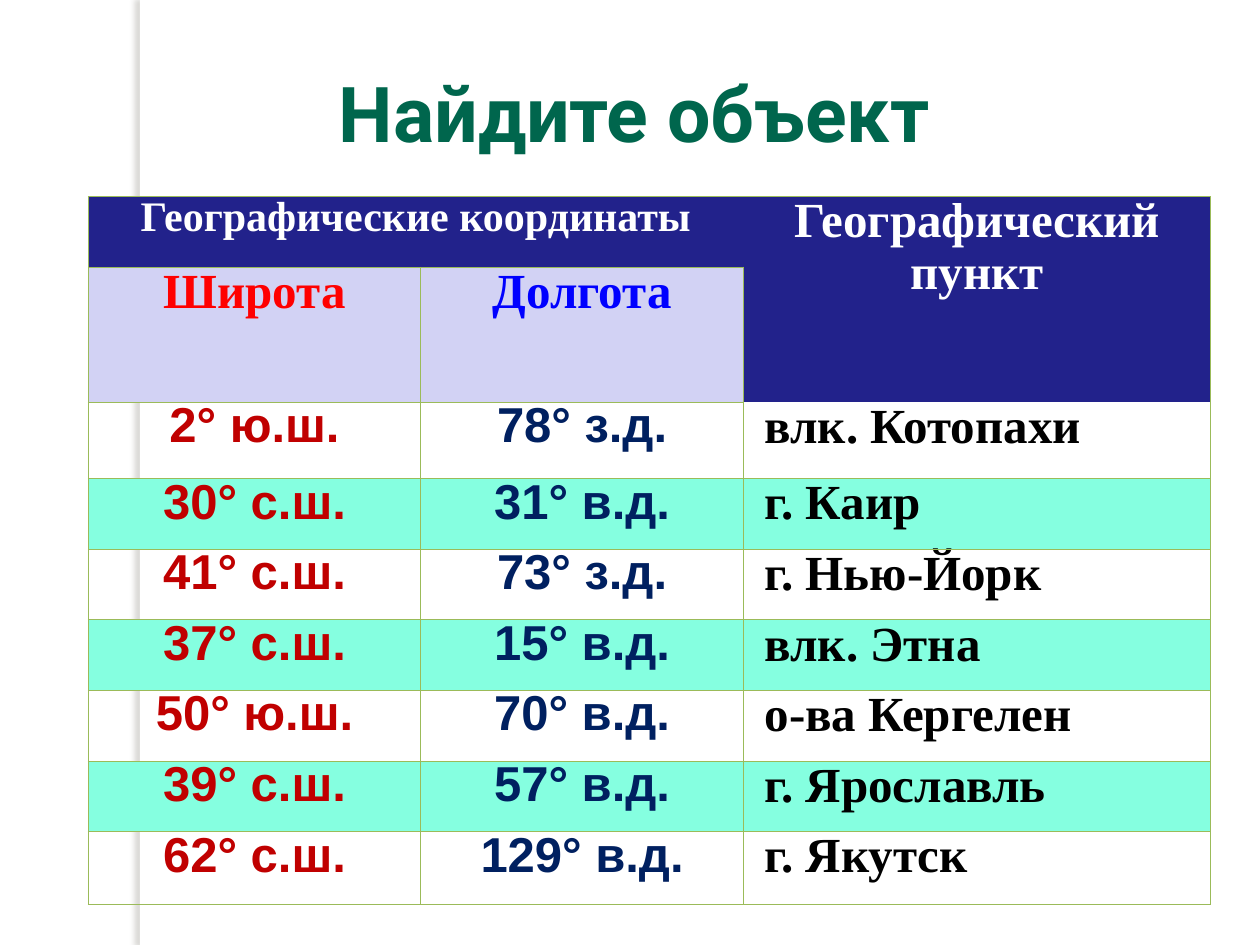
from lxml import etree
from pptx import Presentation
from pptx import util as u
from pptx.dml.color import RGBColor
from pptx.enum import shapes, text
from pptx.oxml import ns

NAVY, LILAC, MINT, GREEN = "22228B", "D2D2F4", "85FFE0", "9BBB59"
SERIF, SANS = "Times New Roman", "Arial"
A = ns.nsdecls("a")


def color(value):
    return RGBColor.from_string(value)


def write(frame, words, font=SERIF, size=28, ink="FFFFFF",
          align=text.PP_ALIGN.CENTER, spacing=0.95):
    para = frame.paragraphs[0]
    para.alignment, para.line_spacing = align, spacing
    span = para.add_run()
    span.text = words
    span.font.name, span.font.size, span.font.bold = font, u.Pt(size), True
    span.font.color.rgb = color(ink)


deck = Presentation()
deck.slide_width, deck.slide_height = u.Inches(10), u.Inches(7.5)
page = deck.slides.add_slide(deck.slide_layouts[5])

# Side strip with a soft shadow to its left
strip = page.shapes.add_shape(shapes.MSO_SHAPE.RECTANGLE, u.Inches(1.11), 0,
                              u.Inches(0.08), deck.slide_height)
strip.fill.solid()
strip.fill.fore_color.rgb = color("FFFFFF")
strip.line.fill.background()
strip.shadow.inherit = False
effects = strip._element.spPr.find(ns.qn("a:effectLst"))
effects.append(etree.fromstring(
    f'<a:outerShdw {A} blurRad="{u.Pt(3)}" dist="{u.Pt(3)}" dir="10800000" '
    'algn="r" rotWithShape="0"><a:srgbClr val="736F63">'
    '<a:alpha val="25000"/></a:srgbClr></a:outerShdw>'))

title = page.shapes.title
title.left, title.top = u.Inches(0.62), u.Inches(0.39)
title.width, title.height = u.Inches(8.83), u.Inches(1)
title.text_frame.vertical_anchor = text.MSO_ANCHOR.MIDDLE
write(title.text_frame, "Найдите объект", font="Roboto", size=44,
      ink="00664D", spacing=1)

places = [
    ("2° ю.ш.", "78° з.д.", "влк. Котопахи"),
    ("30° с.ш.", "31° в.д.", "г. Каир"),
    ("41° с.ш.", "73° з.д.", "г. Нью-Йорк"),
    ("37° с.ш.", "15° в.д.", "влк. Этна"),
    ("50° ю.ш.", "70° в.д.", "о-ва Кергелен"),
    ("39° с.ш.", "57° в.д.", "г. Ярославль"),
    ("62° с.ш.", "129° в.д.", "г. Якутск"),
]
columns = [2.64, 2.56, 3.71]
rows = [0.56, 1.07, 0.61] + [0.56] * 5 + [0.58]
frame = page.shapes.add_table(len(rows), len(columns), u.Inches(0.7), u.Inches(1.56),
                              u.Inches(sum(columns)), u.Inches(sum(rows)))
table = frame.table
table._tbl.tblPr.find(ns.qn("a:tableStyleId")).text = (
    "{2D5ABB26-0587-4C30-8999-92F81FD0307C}")  # no style, no grid
for column, width in zip(table.columns, columns):
    column.width = u.Inches(width)
for row, height in zip(table.rows, rows):
    row.height = u.Inches(height)
table.cell(0, 0).merge(table.cell(0, 1))
table.cell(0, 2).merge(table.cell(1, 2))

# Each entry: row, column, words, fill, border sides, text format
entries = [
    (0, 0, "Географические координаты", NAVY, "LTB", dict(size=24)),
    (0, 2, "Географический пункт", NAVY, "RT", {}),
    (1, 0, "Широта", LILAC, "LRTB", dict(ink="FF0000")),
    (1, 1, "Долгота", LILAC, "LB", dict(ink="0000FF")),
]
formats = [
    dict(font=SANS, ink="C00000", spacing=0.93),
    dict(font=SANS, ink="002060", spacing=0.93),
    dict(ink="000000", align=text.PP_ALIGN.LEFT),
]
for number, place in enumerate(places):
    fill = MINT if number % 2 else None
    for col, words in enumerate(place):
        sides = "LRB" if (number, col) == (0, 2) else "LRTB"
        entries.append((number + 2, col, words, fill, sides, formats[col]))

for row, col, words, fill, sides, style in entries:
    cell = table.cell(row, col)
    cell.margin_top = cell.margin_bottom = 0
    cell.margin_left = u.Inches(0.17 if "align" in style else 0.08)
    cell.margin_right = u.Inches(0.08)
    for side in sides:
        cell._tc.get_or_add_tcPr().append(etree.fromstring(
            f'<a:ln{side} {A} w="{u.Pt(0.45)}"><a:solidFill>'
            f'<a:srgbClr val="{GREEN}"/></a:solidFill></a:ln{side}>'))
    if fill:
        cell.fill.solid()
        cell.fill.fore_color.rgb = color(fill)
    else:
        cell.fill.background()
    write(cell.text_frame, words, **style)

deck.save("out.pptx")
